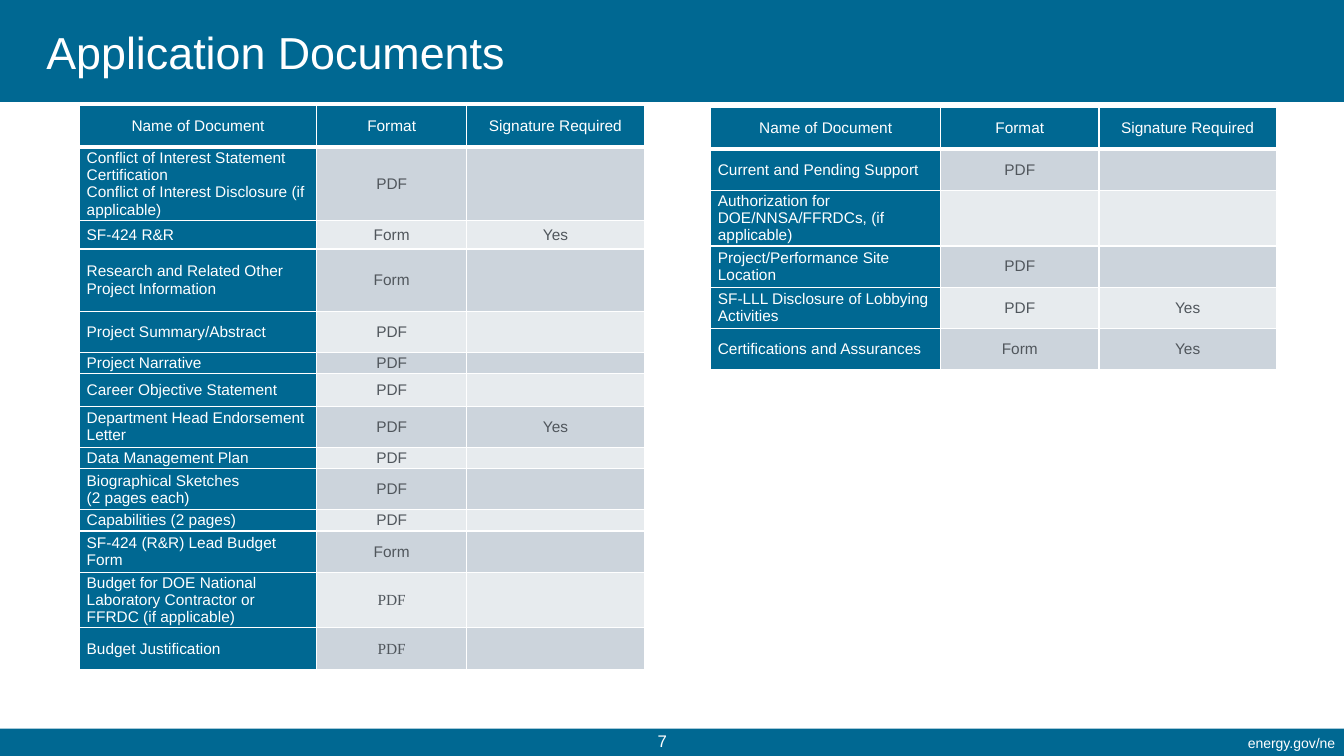
from lxml.etree import SubElement
from pptx import Presentation
from pptx.dml.color import RGBColor
from pptx.enum.shapes import MSO_SHAPE as Shape
from pptx.enum.text import MSO_ANCHOR as Anchor, PP_ALIGN as Align
from pptx.oxml.ns import qn
from pptx.util import Inches, Pt

COLORS = {"blue": "006892", "white": "FFFFFF", "text": "50565C",
          "dark band": "CCD4DC", "light band": "E7EBEE"}
SANS, SERIF = "Arial", "Times New Roman"
TITLE = "Application Documents"
BARS = [(0, 1.01), (7.23, 0.27)]
FOOTERS = [
    ("energy.gov/ne", (7.99, 7.24, 5.35, 0.26), 10, Align.RIGHT),
    ("7", (6.3, 7.2, 0.54, 0.3), 12, Align.CENTER),
]
HEADINGS = ("Name of Document", "Format", "Signature Required")
DOCUMENT_LISTS = [
    {"at": (0.79, 1.05), "columns": (2.35, 1.49, 1.76), "header": 0.41, "documents": [
        ("Conflict of Interest Statement Certification\n"
         "Conflict of Interest Disclosure (if applicable)", "PDF", "", 0.73, SANS),
        ("SF-424 R&R", "Form", "Yes", 0.28, SANS),
        ("Research and Related Other Project Information", "Form", "", 0.62, SANS),
        ("Project Summary/Abstract", "PDF", "", 0.41, SANS),
        ("Project Narrative", "PDF", "", 0.21, SANS),
        ("Career Objective Statement", "PDF", "", 0.32, SANS),
        ("Department Head Endorsement Letter", "PDF", "Yes", 0.41, SANS),
        ("Data Management Plan", "PDF", "", 0.21, SANS),
        ("Biographical Sketches\n(2 pages each)", "PDF", "", 0.41, SANS),
        ("Capabilities (2 pages)", "PDF", "", 0.21, SANS),
        ("SF-424 (R&R) Lead Budget Form", "Form", "", 0.41, SANS),
        ("Budget for DOE National Laboratory Contractor or FFRDC (if applicable)",
         "PDF", "", 0.55, SERIF),
        ("Budget Justification", "PDF", "", 0.42, SERIF),
    ]},
    {"at": (7.05, 1.07), "columns": (2.28, 1.57, 1.76), "header": 0.41, "documents": [
        ("Current and Pending Support", "PDF", "", 0.41, SANS),
        ("Authorization for DOE/NNSA/FFRDCs, (if applicable)", "", "", 0.55, SANS),
        ("Project/Performance Site Location", "PDF", "", 0.41, SANS),
        ("SF-LLL Disclosure of Lobbying Activities", "PDF", "Yes", 0.41, SANS),
        ("Certifications and Assurances", "Form", "Yes", 0.41, SANS),
    ]},
]


def color(name):
    return RGBColor.from_string(COLORS[name])


def add_words(paragraph, words, size, ink="white", face=SANS):
    for number, line in enumerate(words.split("\n")):
        if number:
            paragraph.add_line_break()
        run = paragraph.add_run()
        run.text = line
        run.font.size = Pt(size)
        run.font.name = face
        run.font.color.rgb = color(ink)


def add_borders(cell, bottom):
    properties = cell._tc.get_or_add_tcPr()
    for position, (side, width) in enumerate(
            [("lnL", 1), ("lnR", 1), ("lnT", 1), ("lnB", bottom)]):
        line = SubElement(properties, qn(f"a:{side}"), w=str(Pt(width)))
        fill = SubElement(line, qn("a:solidFill"))
        SubElement(fill, qn("a:srgbClr"), val=COLORS["white"])
        properties.insert(position, line)


def fill_cell(cell, words, row, column, face):
    is_blue = row == 0 or column == 0
    band = "dark band" if row % 2 else "light band"
    cell.fill.solid()
    cell.fill.fore_color.rgb = color("blue" if is_blue else band)
    add_borders(cell, 1 if row else 3)
    cell.vertical_anchor = Anchor.MIDDLE
    cell.margin_left = cell.margin_right = Inches(0.07)
    cell.margin_top = cell.margin_bottom = 0
    paragraph = cell.text_frame.paragraphs[0]
    paragraph.alignment = Align.LEFT if row and column == 0 else Align.CENTER
    paragraph.space_before = paragraph.space_after = Pt(1)
    if words:
        add_words(paragraph, words, 11, "white" if is_blue else "text",
                  face if column else SANS)
    else:
        SubElement(paragraph._p, qn("a:endParaRPr"), sz="1100")


def add_document_list(slide, at, columns, header, documents):
    rows = [(*HEADINGS, header, SANS), *documents]
    frame = slide.shapes.add_table(
        len(rows), len(columns), *map(Inches, at),
        Inches(sum(columns)), Inches(sum(row[3] for row in rows)))
    table = frame.table
    for column, width in enumerate(columns):
        table.columns[column].width = Inches(width)
    for row, (*entries, height, face) in enumerate(rows):
        table.rows[row].height = Inches(height)
        for column, words in enumerate(entries):
            fill_cell(table.cell(row, column), words, row, column, face)


def main():
    deck = Presentation()
    deck.slide_width, deck.slide_height = Inches(13.33), Inches(7.5)
    slide = deck.slides.add_slide(deck.slide_layouts[5])

    for top, height in BARS:
        bar = slide.shapes.add_shape(
            Shape.RECTANGLE, 0, Inches(top), deck.slide_width, Inches(height))
        bar.shadow.inherit = False
        bar.fill.solid()
        bar.fill.fore_color.rgb = color("blue")
        bar.line.fill.background()

    for words, place, size, alignment in FOOTERS:
        footer = slide.shapes.add_textbox(*map(Inches, place)).text_frame
        footer.word_wrap = True
        footer.vertical_anchor = Anchor.MIDDLE
        footer.paragraphs[0].alignment = alignment
        add_words(footer.paragraphs[0], words, size)

    title = slide.shapes.title
    title.left, title.top, title.width, title.height = map(
        Inches, (0.36, 0.09, 8.26, 0.99))
    title.text_frame.vertical_anchor = Anchor.MIDDLE
    heading = title.text_frame.paragraphs[0]
    heading.alignment = Align.LEFT
    heading.line_spacing = Pt(28)
    add_words(heading, TITLE, 32)
    slide.shapes._spTree.append(title._element)

    for document_list in DOCUMENT_LISTS:
        add_document_list(slide, **document_list)
    deck.save("out.pptx")


if __name__ == "__main__":
    main()
